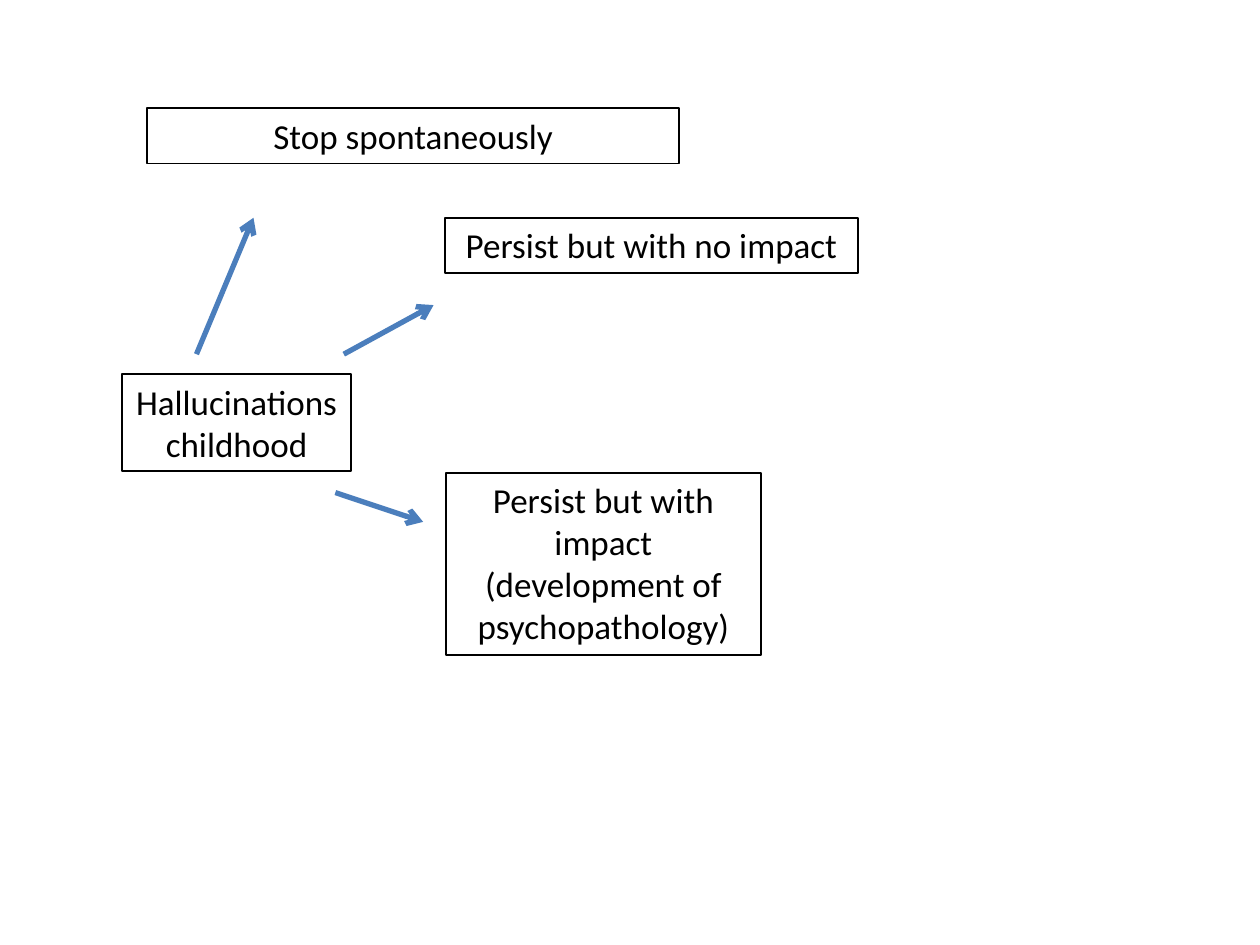
from lxml.etree import SubElement
from pptx import Presentation
from pptx.dml.color import RGBColor
from pptx.enum.shapes import MSO_CONNECTOR
from pptx.enum.text import MSO_AUTO_SIZE, MSO_ANCHOR, PP_ALIGN
from pptx.oxml.ns import qn
from pptx.util import Cm, Pt

# Content: text, (left, top, width, height) in cm, whether the text wraps
BOXES = [
    ("Hallucinations\nchildhood", (2.46, 7.54, 4.62, 1.96), False),
    ("Stop spontaneously", (2.97, 2.18, 10.72, 1.12), True),
    ("Persist but with impact (development of psychopathology)",
     (8.99, 9.53, 6.35, 3.68), True),
    ("Persist but with no impact", (8.97, 4.39, 8.33, 1.12), True),
]
# Arrows from the childhood box to each outcome: from x, y, to x, y in cm
ARROWS = [
    (3.96, 7.14, 5.11, 4.39),
    (6.76, 9.93, 8.53, 10.52),
    (6.93, 7.14, 8.74, 6.15),
]
FONT, FONT_SIZE = "Calibri", 20
BLACK, BLUE = "000000", "4B7EBC"


def set_color(color_format, value):
    color_format.rgb = RGBColor.from_string(value)


def set_line(line, value, width):
    set_color(line.fill.fore_color if line.fill.type else line.color, value)
    line.width = Pt(width)


def add_box(slide, text, place, wraps):
    box = slide.shapes.add_textbox(*map(Cm, place))
    set_line(box.line, BLACK, 1)
    frame = box.text_frame
    frame.text = text
    frame.word_wrap = wraps
    frame.auto_size = MSO_AUTO_SIZE.SHAPE_TO_FIT_TEXT
    frame.vertical_anchor = MSO_ANCHOR.TOP
    for paragraph in frame.paragraphs:
        paragraph.alignment = PP_ALIGN.CENTER
        for run in paragraph.runs:
            run.font.name = FONT
            run.font.size = Pt(FONT_SIZE)
            set_color(run.font.color, BLACK)


def add_arrow(slide, ends):
    arrow = slide.shapes.add_connector(MSO_CONNECTOR.STRAIGHT, *map(Cm, ends))
    set_line(arrow.line, BLUE, 3)
    # Open arrowhead at the far end, and no shadow
    SubElement(arrow.line._get_or_add_ln(), qn("a:tailEnd"), type="arrow")
    SubElement(arrow._element.spPr, qn("a:effectLst"))


def main():
    presentation = Presentation()
    presentation.slide_width = Cm(25.4)
    presentation.slide_height = Cm(19.05)
    blank_layout = presentation.slide_layouts[6]
    slide = presentation.slides.add_slide(blank_layout)
    for text, place, wraps in BOXES:
        add_box(slide, text, place, wraps)
    for ends in ARROWS:
        add_arrow(slide, ends)
    presentation.save("out.pptx")


if __name__ == "__main__":
    main()
